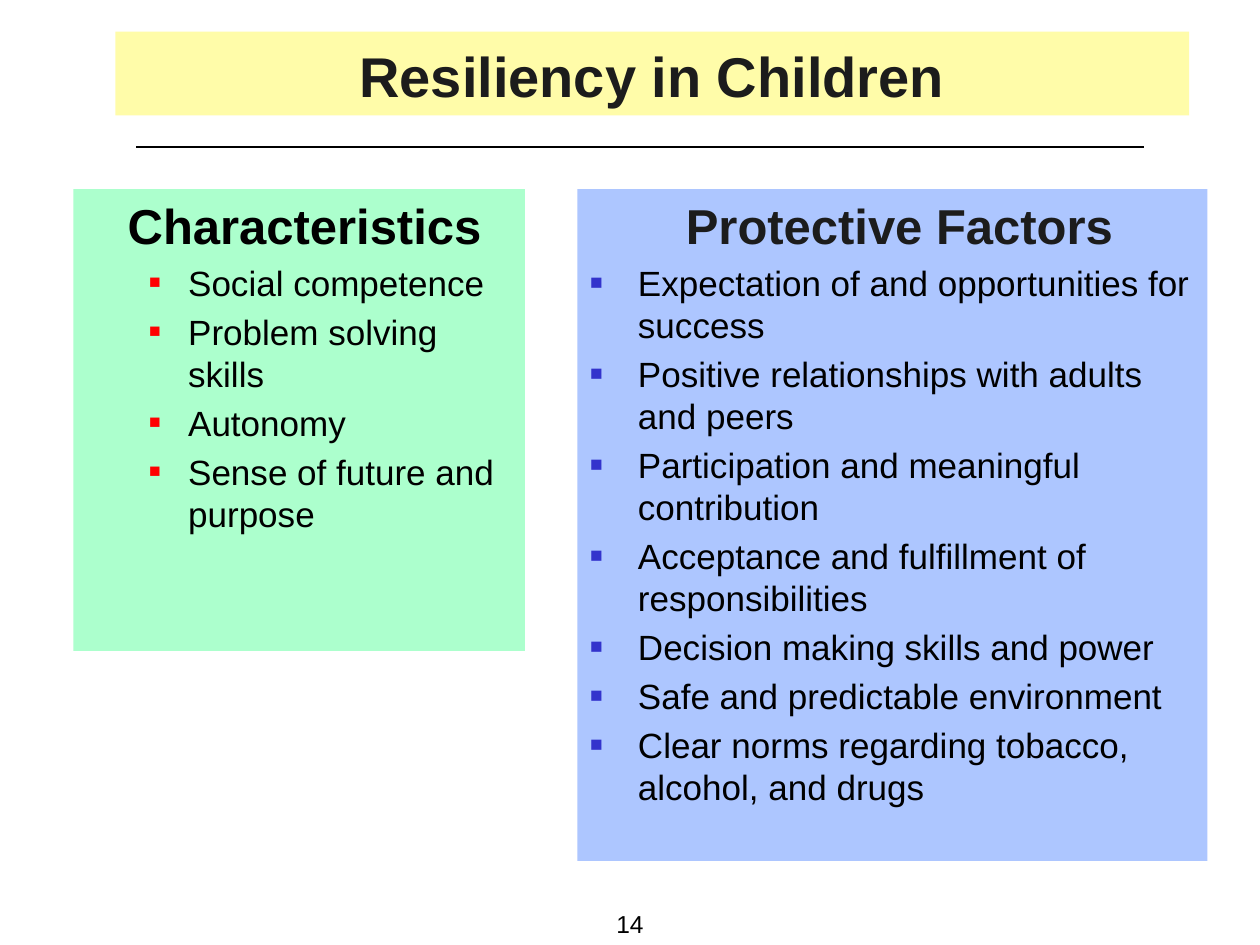
from dataclasses import dataclass

import pptx
import pptx.dml.color
import pptx.enum.shapes
import pptx.enum.text
import pptx.oxml
import pptx.oxml.ns
import pptx.util

RGB = pptx.dml.color.RGBColor.from_string
ALIGN = pptx.enum.text.PP_ALIGN
ANCHOR = pptx.enum.text.MSO_ANCHOR
Inches, Pt = pptx.util.Inches, pptx.util.Pt

COLUMNS, ROWS = 120, 90
INSET = 0.6  # columns between a card's edge and its text box


@dataclass(frozen=True)
class Theme:
    font: str = "Arial"
    title_size: int = 32
    heading_size: int = 28
    body_size: int = 20
    number_size: int = 14
    black: str = "000000"
    dark: str = "1C1C1C"
    yellow: str = "FFFCA9"
    green: str = "ACFFCD"
    blue: str = "ADC6FF"
    red_bullet: str = "FF0000"
    blue_bullet: str = "3333CC"


@dataclass(frozen=True)
class Box:
    """A rectangle in grid columns and rows."""
    left: float
    top: float
    width: float
    height: float


@dataclass(frozen=True)
class Panel:
    placeholder: int
    card: Box
    text_rows: float
    fill: str
    heading: str
    heading_color: str
    heading_indent: float
    bullet_color: str
    bullet_size: int
    text_indent: float
    hanging: float
    level: int
    items: tuple[str, ...]


THEME = Theme()
TITLE_CARD = Box(11, 3, 102.25, 8)
TITLE_DROP = 0.8
PANELS = (
    Panel(1, Box(7, 18, 43, 44), 32.6, THEME.green,
          "Characteristics", THEME.black, 0.33,
          THEME.red_bullet, 55, 0.81, 0.31, 1,
          ("Social competence", "Problem solving skills", "Autonomy",
           "Sense of future and purpose")),
    Panel(2, Box(55, 18, 60, 64), 58.1, THEME.blue,
          "Protective Factors", THEME.dark, 0.76,
          THEME.blue_bullet, 60, 0.38, 0.38, 0,
          ("Expectation of and opportunities for success",
           "Positive relationships with adults and peers",
           "Participation and meaningful contribution",
           "Acceptance and fulfillment of responsibilities",
           "Decision making skills and power",
           "Safe and predictable environment",
           "Clear norms regarding tobacco, alcohol, and drugs")),
)


def apply(target, values: dict) -> None:
    for name, value in values.items():
        setattr(target, name, value)


def place(prs, box: Box) -> dict:
    col, row = prs.slide_width / COLUMNS, prs.slide_height / ROWS
    return {"left": round(box.left * col), "top": round(box.top * row),
            "width": round(box.width * col), "height": round(box.height * row)}


def add_card(prs, s, box: Box, fill: str) -> None:
    """Draw a plain rectangle behind the placeholders."""
    sp = s.shapes.add_shape(pptx.enum.shapes.MSO_SHAPE.RECTANGLE,
                            **place(prs, box))
    sp.shadow.inherit = False
    sp.fill.solid()
    sp.fill.fore_color.rgb = RGB(fill)
    sp.line.fill.background()
    s.shapes.element.insert(2, sp.element)


def set_frame(tf, anchor, wrap: bool = True) -> None:
    margins = ("margin_left", "margin_top", "margin_right", "margin_bottom")
    apply(tf, dict.fromkeys(margins, Inches(0.05)))
    apply(tf, {"auto_size": pptx.enum.text.MSO_AUTO_SIZE.NONE,
               "word_wrap": wrap, "vertical_anchor": anchor})


def write(p, text: str, size: int, color: str, bold: bool = False,
          align=ALIGN.LEFT, before: float = 0) -> None:
    apply(p, {"alignment": align, "space_before": Pt(before)})
    r = p.add_run()
    r.text = text
    apply(r.font, {"name": THEME.font, "size": Pt(size), "bold": bold})
    r.font.color.rgb = RGB(color)


def set_indent(p, left: float, hanging: float, *bullet: str) -> None:
    """Set the margins in inches and append the bullet elements."""
    pPr = p._p.get_or_add_pPr()
    pPr.set("marL", str(Inches(left)))
    pPr.set("indent", str(-Inches(hanging)))
    ns = pptx.oxml.ns.nsdecls("a")
    for xml in bullet:
        pPr.append(pptx.oxml.parse_xml(xml.replace("/>", f" {ns}/>", 1)
                                       if xml.endswith("/>") and "</" not in xml
                                       else xml.replace(">", f" {ns}>", 1)))


def add_panel(prs, s, panel: Panel) -> None:
    card = panel.card
    add_card(prs, s, card, panel.fill)
    sp = s.placeholders[panel.placeholder]
    apply(sp, place(prs, Box(card.left + INSET, card.top,
                             card.width - 2 * INSET, panel.text_rows)))
    tf = sp.text_frame
    set_frame(tf, ANCHOR.TOP)
    p = tf.paragraphs[0]
    set_indent(p, panel.heading_indent, 0, "<a:buNone/>")
    write(p, panel.heading, THEME.heading_size, panel.heading_color, True)
    for item in panel.items:
        p = tf.add_paragraph()
        p.level = panel.level
        set_indent(
            p, panel.text_indent, panel.hanging,
            f'<a:buClr><a:srgbClr val="{panel.bullet_color}"/></a:buClr>',
            f'<a:buSzPct val="{panel.bullet_size * 1000}"/>',
            f'<a:buFont typeface="{THEME.font}"/>',
            '<a:buChar char="■"/>')
        write(p, item, THEME.body_size, THEME.black, before=4)


def add_title(prs, s) -> None:
    card = TITLE_CARD
    add_card(prs, s, card, THEME.yellow)
    sp = s.shapes.title
    apply(sp, place(prs, Box(card.left + INSET, card.top + TITLE_DROP,
                             card.width - 2 * INSET, card.height - TITLE_DROP)))
    set_frame(sp.text_frame, ANCHOR.BOTTOM)
    write(sp.text_frame.paragraphs[0], "Resiliency in Children",
          THEME.title_size, THEME.dark, True, ALIGN.CENTER)


def add_rule(prs, s) -> None:
    at = place(prs, Box(13, 14, 96, 0))
    line = s.shapes.add_connector(
        pptx.enum.shapes.MSO_CONNECTOR.STRAIGHT, at["left"], at["top"],
        at["left"] + at["width"], at["top"])
    line.line.color.rgb = RGB(THEME.black)
    line.line.width = Pt(0.75)
    line.element.spPr.append(pptx.oxml.parse_xml(
        f'<a:effectLst {pptx.oxml.ns.nsdecls("a")}/>'))


def add_page_number(prs, s) -> None:
    tf = s.shapes.add_textbox(**place(prs, Box(58, 86.2, 4, 3.8))).text_frame
    set_frame(tf, ANCHOR.BOTTOM, wrap=False)
    write(tf.paragraphs[0], "14", THEME.number_size, THEME.black,
          align=ALIGN.CENTER)


def main() -> None:
    prs = pptx.Presentation()
    apply(prs, {"slide_width": Inches(10), "slide_height": Inches(7.5)})
    s = prs.slides.add_slide(prs.slide_layouts.get_by_name("Two Content"))
    add_title(prs, s)
    for panel in PANELS:
        add_panel(prs, s, panel)
    add_rule(prs, s)
    add_page_number(prs, s)
    prs.save("out.pptx")


if __name__ == "__main__":
    main()
